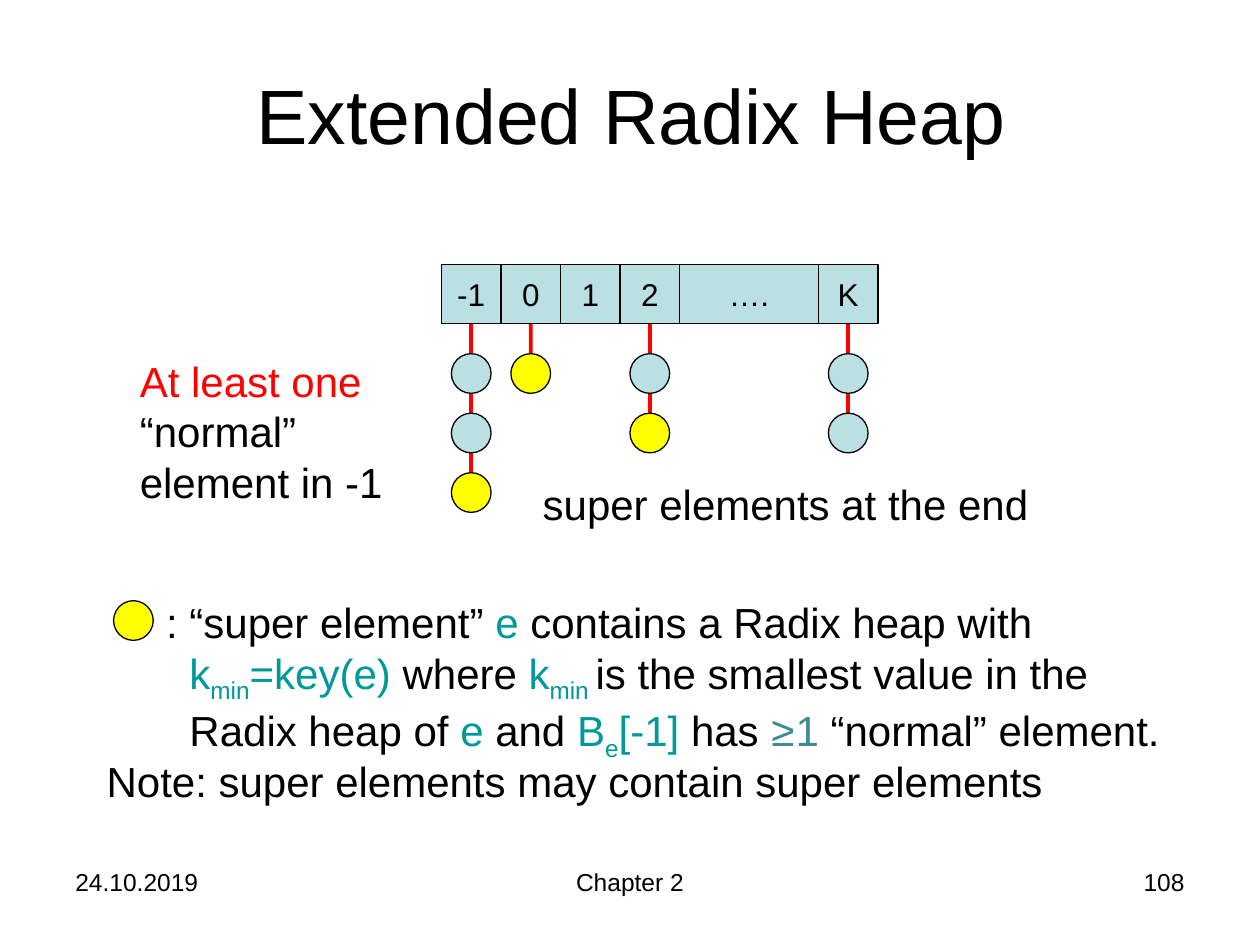
import pptx
import pptx.dml.color
import pptx.enum.shapes
import pptx.enum.text
import pptx.util
from lxml import etree

Cm = pptx.util.Cm
ALIGN = pptx.enum.text.PP_ALIGN
ANCHOR = pptx.enum.text.MSO_ANCHOR
SHAPE = pptx.enum.shapes.MSO_SHAPE

THEME = {
    "font": "Arial", "symbol font": "Courier New",
    "title": 44, "body": 24, "cell": 18, "footer": 14,
    "black": "000000", "red": "FF0000", "teal": "009999", "dark teal": "3C8C93",
    "normal": "BBE0E3", "super": "FFFF00",
    "outline": 0.75, "link": 2.25,
}

# Content: a paragraph is a list of (text, format) spans; "\n" breaks the line
TEAL = {"color": "teal"}
TEAL_SUB = {"color": "teal", "baseline": -25000}

TITLE = [[("Extended Radix Heap", {})]]
NORMAL_NOTE = [
    [("At least one", {"color": "red"})],
    [("“normal”\nelement in -1", {})],
]
SUPER_NOTE = [[("super elements at the end", {})]]
DEFINITION = [[
    (": “super element” ", {}), ("e", TEAL), (" contains a Radix heap with\n", {}),
    ("k", TEAL), ("min", TEAL_SUB), ("=key(e) ", TEAL), ("where ", {}),
    ("k", TEAL), ("min ", TEAL_SUB), ("is the smallest value in the\nRadix heap of ", {}),
    ("e ", TEAL), ("and ", {}), ("B", TEAL), ("e", TEAL_SUB), ("[-1] ", TEAL), ("has ", {}),
    ("≥", {"color": "dark teal", "font": "symbol font"}), ("1", {"color": "dark teal"}),
    (" “normal” element.", {}),
]]
CLOSING_NOTE = [[("Note: super elements may contain super elements", {})]]

# Buckets: label, width in cm, chain of elements below
BUCKETS = [
    ("-1", 1.2, ["normal", "normal", "super"]),
    ("0", 1.2, ["super"]),
    ("1", 1.2, []),
    ("2", 1.2, ["normal", "super"]),
    ("….", 2.8, []),
    ("K", 1.2, ["normal", "normal"]),
]

# Text boxes: paragraphs, (left, top, width, height) in cm, format
FOOTER = {"size": "footer"}
CENTER, RIGHT = {"align": ALIGN.CENTER}, {"align": ALIGN.RIGHT}
FREE = {"wrap": False}
TEXTS = [
    (TITLE, (1.3, 0.71, 22.86, 3.18), {"size": "title", "anchor": ANCHOR.MIDDLE, **CENTER}),
    (NORMAL_NOTE, (2.57, 7.04, 5.46, 3.33), FREE),
    (SUPER_NOTE, (10.69, 9.53, 10.41, 1.27), FREE),
    (DEFINITION, (3.1, 11.91, 21.06, 3.33), {"hanging": 0.47, **FREE}),
    (CLOSING_NOTE, (1.9, 15.11, 19.58, 1.27), FREE),
    ([[("24.10.2019", {})]], (1.27, 17.35, 5.93, 1.32), FOOTER),
    ([[("Chapter 2", {})]], (8.68, 17.35, 8.04, 1.32), FOOTER | CENTER),
    ([[("108", {})]], (18.2, 17.35, 5.93, 1.32), FOOTER | RIGHT),
]

# Bucket geometry in cm
ROW_LEFT, ROW_TOP, CELL_HEIGHT = 8.9, 5.33, 1.2
DIAMETER, CHAIN_GAP, CHAIN_STEP = 0.8, 0.6, 1.2
LEGEND_AT = (2.29, 12.11)


def rgb(name):
    return pptx.dml.color.RGBColor.from_string(THEME[name])


def write_text(shape, paragraphs, style):
    frame = shape.text_frame
    frame.word_wrap = style.get("wrap", True)
    frame.vertical_anchor = style.get("anchor", ANCHOR.TOP)
    for number, spans in enumerate(paragraphs):
        para = frame.add_paragraph() if number else frame.paragraphs[0]
        para.alignment = style.get("align", ALIGN.LEFT)
        if "hanging" in style:
            indent = Cm(style["hanging"])
            properties = para._p.get_or_add_pPr()
            properties.set("marL", str(indent))
            properties.set("indent", str(-indent))
        for text, look in spans:
            for line_number, line in enumerate(text.split("\n")):
                if line_number:
                    para.add_line_break()
                if line:
                    add_span(para, line, look, style.get("size", "body"))


def add_span(para, text, look, size):
    span = para.add_run()
    span.text = text
    font_values = {
        "name": THEME[look.get("font", "font")],
        "size": pptx.util.Pt(THEME[size]),
    }
    for name, value in font_values.items():
        setattr(span.font, name, value)
    span.font.color.rgb = rgb(look.get("color", "black"))
    if "baseline" in look:
        span._r.get_or_add_rPr().set("baseline", str(look["baseline"]))


def add_figure(page, kind, place, fill):
    figure = page.shapes.add_shape(kind, *map(Cm, place))
    figure.shadow.inherit = False
    figure.fill.solid()
    figure.fill.fore_color.rgb = rgb(fill)
    figure.line.color.rgb = rgb("black")
    figure.line.width = pptx.util.Pt(THEME["outline"])
    return figure


def add_element(page, left, top, kind):
    add_figure(page, SHAPE.OVAL, (left, top, DIAMETER, DIAMETER), kind)


def add_link(page, cell, center, top, bottom):
    link = page.shapes.add_connector(
        pptx.enum.shapes.MSO_CONNECTOR.STRAIGHT, Cm(center), Cm(top), Cm(center), Cm(bottom))
    link.begin_connect(cell, 2)
    link.line.color.rgb = rgb("red")
    link.line.width = pptx.util.Pt(THEME["link"])
    etree.SubElement(link._element.spPr, pptx.oxml.ns.qn("a:effectLst"))


def add_buckets(page):
    left, row_bottom = ROW_LEFT, ROW_TOP + CELL_HEIGHT
    for label, width, chain in BUCKETS:
        cell = add_figure(page, SHAPE.RECTANGLE, (left, ROW_TOP, width, CELL_HEIGHT), "normal")
        write_text(cell, [[(label, {})]],
                   {"size": "cell", "anchor": ANCHOR.MIDDLE, **CENTER, **FREE})
        center = left + width / 2
        tops = [row_bottom + CHAIN_GAP + CHAIN_STEP * place for place in range(len(chain))]
        if chain:
            add_link(page, cell, center, row_bottom, tops[-1])
        for top, kind in zip(tops, chain):
            add_element(page, center - DIAMETER / 2, top, kind)
        left += width


def main():
    deck = pptx.Presentation()
    deck.slide_width, deck.slide_height = Cm(25.4), Cm(19.05)
    page = deck.slides.add_slide(deck.slide_layouts[6])

    # Title, explanations and footer
    for paragraphs, place, style in TEXTS:
        box = page.shapes.add_textbox(*map(Cm, place))
        write_text(box, paragraphs, style)

    # Bucket row with its chains, then the legend symbol
    add_buckets(page)
    add_element(page, *LEGEND_AT, "super")

    deck.save("out.pptx")


if __name__ == "__main__":
    main()
